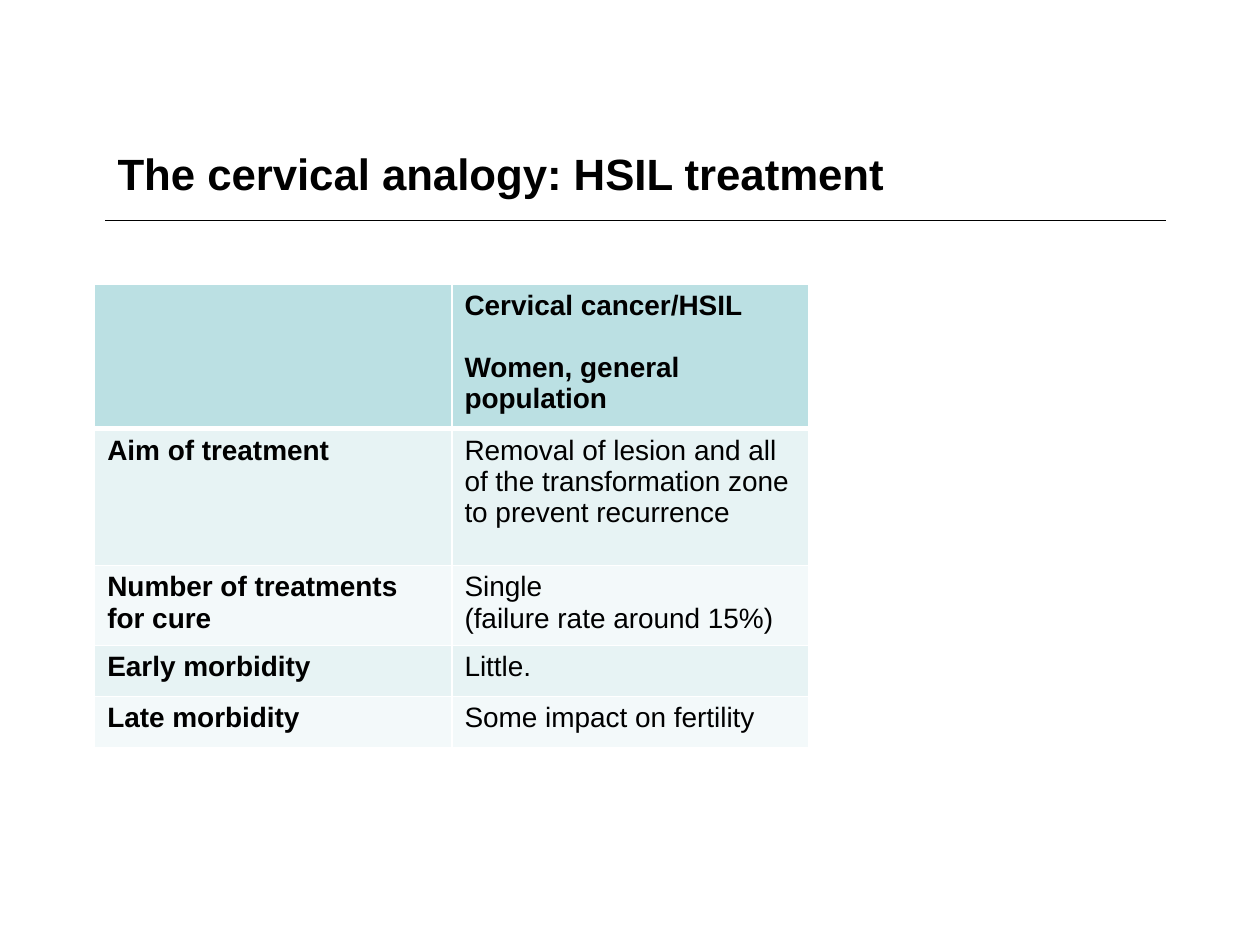
from lxml import etree
from pptx import Presentation
from pptx.dml.color import RGBColor
from pptx.enum.shapes import MSO_CONNECTOR
from pptx.enum.text import MSO_ANCHOR
from pptx.oxml.ns import qn
from pptx.util import Cm, Pt

STRAIGHT = MSO_CONNECTOR.STRAIGHT
TOP = MSO_ANCHOR.TOP
COLORS = {"ink": "000000", "border": "FFFFFF", "header": "BBE0E3",
          "band_dark": "E7F3F4", "band_light": "F3F9FA"}
BLANK_LINE = 17.7

# Each cell is a list of paragraphs
ROWS = [
    ([""], ["Cervical cancer/HSIL", "Women, general population"]),
    (["Aim of treatment"],
     ["Removal of lesion and all of the transformation zone to prevent recurrence"]),
    (["Number of treatments for cure"], ["Single", "(failure rate around 15%)"]),
    (["Early morbidity"], ["Little."]),
    (["Late morbidity"], ["Some impact on fertility"]),
]
ROW_HEIGHTS = [2.74, 2.76, 1.51, 1.03, 1.03]
COLUMN_WIDTH = 7.2


class SlideBuilder:
    def __init__(self, page, font_name="Arial"):
        self.page = page
        self.font_name = font_name

    def style(self, para, size, bold):
        para.font.name = self.font_name
        para.font.size = Pt(size)
        para.font.bold = bold
        para.font.color.rgb = RGBColor.from_string(COLORS["ink"])

    def title(self, text, left, top, width, height):
        box = self.page.shapes.add_textbox(Cm(left), Cm(top), Cm(width), Cm(height))
        frame = box.text_frame
        frame.word_wrap = True
        frame.vertical_anchor = TOP
        frame.margin_top = Cm(0.23)
        para = frame.paragraphs[0]
        para.text = text
        self.style(para, 25, True)

    def rule(self, left, right, y):
        line = self.page.shapes.add_connector(STRAIGHT, Cm(left), Cm(y), Cm(right), Cm(y))
        line.line.color.rgb = RGBColor.from_string(COLORS["ink"])
        line.line.width = Pt(0.75)
        etree.SubElement(line._element.spPr, qn("a:effectLst"))

    def borders(self, cell, widths):
        properties = cell._tc.get_or_add_tcPr()
        for position, (side, width) in enumerate(widths.items()):
            edge = etree.Element(qn(f"a:ln{side}"), w=str(Pt(width)))
            fill = etree.SubElement(edge, qn("a:solidFill"))
            etree.SubElement(fill, qn("a:srgbClr"), val=COLORS["border"])
            properties.insert(position, edge)

    def cell(self, cell, lines, fill, bold, gap, widths):
        cell.fill.solid()
        cell.fill.fore_color.rgb = RGBColor.from_string(COLORS[fill])
        self.borders(cell, widths)
        cell.text = "\n".join(lines)
        for index, para in enumerate(cell.text_frame.paragraphs):
            if index:
                para.space_before = Pt(gap)
            self.style(para, 16, bold)

    def table(self, rows, heights, column_width, left, top):
        columns = len(rows[0])
        table = self.page.shapes.add_table(
            len(rows), columns, Cm(left), Cm(top),
            Cm(column_width * columns), Cm(sum(heights))).table
        for column in table.columns:
            column.width = Cm(column_width)
        for r, (row, height) in enumerate(zip(rows, heights)):
            table.rows[r].height = Cm(height)
            header = r == 0
            fill = "header" if header else "band_dark" if r % 2 else "band_light"
            # A thick edge separates the header from the body
            widths = {"L": 1, "R": 1, "T": 3 if r == 1 else 1, "B": 3 if header else 1}
            for c, lines in enumerate(row):
                self.cell(table.cell(r, c), lines, fill, header or c == 0,
                          BLANK_LINE if header else 0, widths)


def main():
    deck = Presentation()
    deck.slide_width, deck.slide_height = Cm(25.4), Cm(19.05)
    builder = SlideBuilder(deck.slides.add_slide(deck.slide_layouts[6]))

    # Heading and rule
    builder.rule(2.12, 23.5, 4.45)
    builder.title("The cervical analogy: HSIL treatment", 2.12, 2.72, 21.6, 1.7)

    # Treatment table
    builder.table(ROWS, ROW_HEIGHTS, COLUMN_WIDTH, 1.91, 5.73)

    deck.save("out.pptx")


if __name__ == "__main__":
    main()
